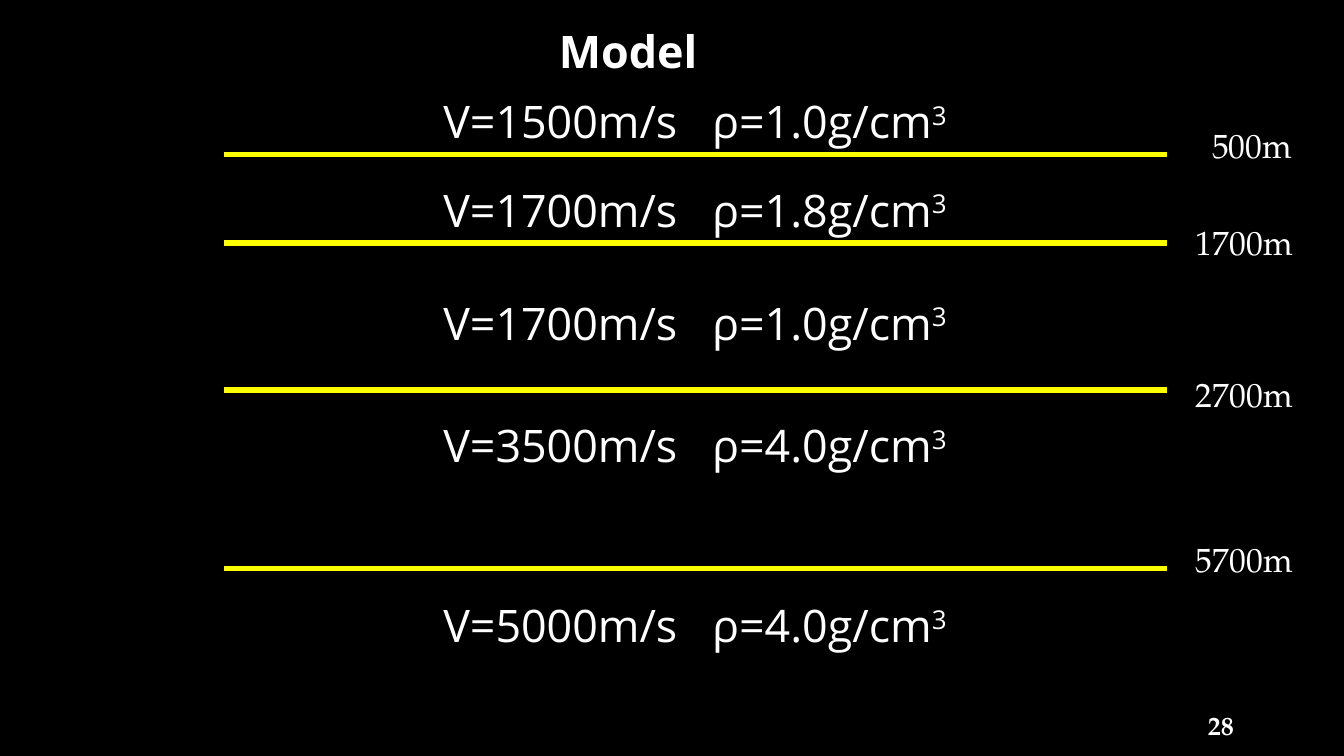
from dataclasses import dataclass

from lxml.etree import SubElement
from pptx import Presentation
from pptx.dml.color import RGBColor
from pptx.enum.shapes import MSO_CONNECTOR
from pptx.enum.text import MSO_ANCHOR, MSO_AUTO_SIZE, PP_ALIGN
from pptx.oxml.ns import qn
from pptx.slide import Slide
from pptx.text.text import _Paragraph as Paragraph
from pptx.util import Inches, Length, Pt

BLACK = RGBColor(0x00, 0x00, 0x00)
WHITE = RGBColor(0xFF, 0xFF, 0xFF)
YELLOW = RGBColor(0xFF, 0xFF, 0x00)
SANS = "Open Sans"
SERIF = "TeX Gyre Pagella"

COLUMNS, ROWS = 100, 56.25
LINE_START, LINE_END = 16.7, 86.8
LAYER_LEFT, LAYER_WIDTH = 32, 46.7
DENSITY_TAB = 20
DEPTH_RIGHT = 97.3
TEXT_HEIGHT = 5


@dataclass(frozen=True)
class Area:
    left: float
    top: float
    width: float
    height: float


@dataclass(frozen=True)
class Layer:
    velocity: int
    density: float
    row: float


@dataclass(frozen=True)
class Boundary:
    depth: int
    row: float
    label_row: float


LAYERS = [
    Layer(1500, 1.0, 6.5),
    Layer(1700, 1.8, 13.1),
    Layer(1700, 1.0, 21.5),
    Layer(3500, 4.0, 30.6),
    Layer(5000, 4.0, 44),
]
BOUNDARIES = [
    Boundary(500, 11.5, 8.8),
    Boundary(1700, 18.1, 16),
    Boundary(2700, 29, 27.3),
    Boundary(5700, 42.3, 39.6),
]


def cells(count: float) -> Length:
    return Inches(count / 10)


def add_text(slide: Slide, text: str, area: Area, *, font: str = SANS,
             size: float = 24, bold: bool = False, superscript: str = "",
             wrap: bool = True, grow: bool = True, side_inset: float = 1,
             align: PP_ALIGN = PP_ALIGN.LEFT,
             anchor: MSO_ANCHOR = MSO_ANCHOR.TOP) -> Paragraph:
    box = slide.shapes.add_textbox(cells(area.left), cells(area.top),
                                   cells(area.width), cells(area.height))
    frame = box.text_frame
    frame.word_wrap = wrap
    frame.auto_size = MSO_AUTO_SIZE.SHAPE_TO_FIT_TEXT if grow else MSO_AUTO_SIZE.NONE
    frame.margin_left = frame.margin_right = cells(side_inset)
    frame.vertical_anchor = anchor
    paragraph = frame.paragraphs[0]
    paragraph.alignment = align
    for part in filter(None, (text, superscript)):
        run = paragraph.add_run()
        run.text = part
        run.font.name = font
        run.font.size = Pt(size)
        run.font.bold = bold
        run.font.color.rgb = WHITE
    if superscript:
        run.font._element.set("baseline", "30000")
    return paragraph


def add_layer(slide: Slide, layer: Layer) -> None:
    properties = add_text(
        slide, f"V={layer.velocity}m/s\tρ={layer.density:.1f}g/cm",
        Area(LAYER_LEFT, layer.row, LAYER_WIDTH, TEXT_HEIGHT), superscript="3")
    tabs = SubElement(properties._p.get_or_add_pPr(), qn("a:tabLst"))
    SubElement(tabs, qn("a:tab"), pos=str(cells(DENSITY_TAB)), algn="l")


def add_boundary(slide: Slide, boundary: Boundary) -> None:
    interface = slide.shapes.add_connector(
        MSO_CONNECTOR.STRAIGHT, cells(LINE_START), cells(boundary.row),
        cells(LINE_END), cells(boundary.row))
    interface.line.color.rgb = YELLOW
    interface.line.width = Pt(3)
    SubElement(interface._element.spPr, qn("a:effectLst"))


def add_depth(slide: Slide, boundary: Boundary) -> None:
    depth = f"{boundary.depth}m"
    width = 3.3 + 1.2 * len(depth)
    add_text(slide, depth, Area(DEPTH_RIGHT - width, boundary.label_row, width, 4),
             font=SERIF, size=18, wrap=False)


def main() -> None:
    deck = Presentation()
    deck.slide_width, deck.slide_height = cells(COLUMNS), cells(ROWS)
    slide = deck.slides.add_slide(deck.slide_layouts[6])
    slide.background.fill.solid()
    slide.background.fill.fore_color.rgb = BLACK

    for boundary in BOUNDARIES:
        add_boundary(slide, boundary)
    for boundary in BOUNDARIES:
        add_depth(slide, boundary)
    add_text(slide, "Model", Area(40.6, 1.3, 17.3, TEXT_HEIGHT), bold=True)
    for layer in LAYERS:
        add_layer(slide, layer)
    add_text(slide, "28", Area(86.7, 52.6, 8.3, 3), font=SERIF, size=14, bold=True,
             grow=False, side_inset=0, align=PP_ALIGN.CENTER,
             anchor=MSO_ANCHOR.BOTTOM)
    deck.save("out.pptx")


if __name__ == "__main__":
    main()
